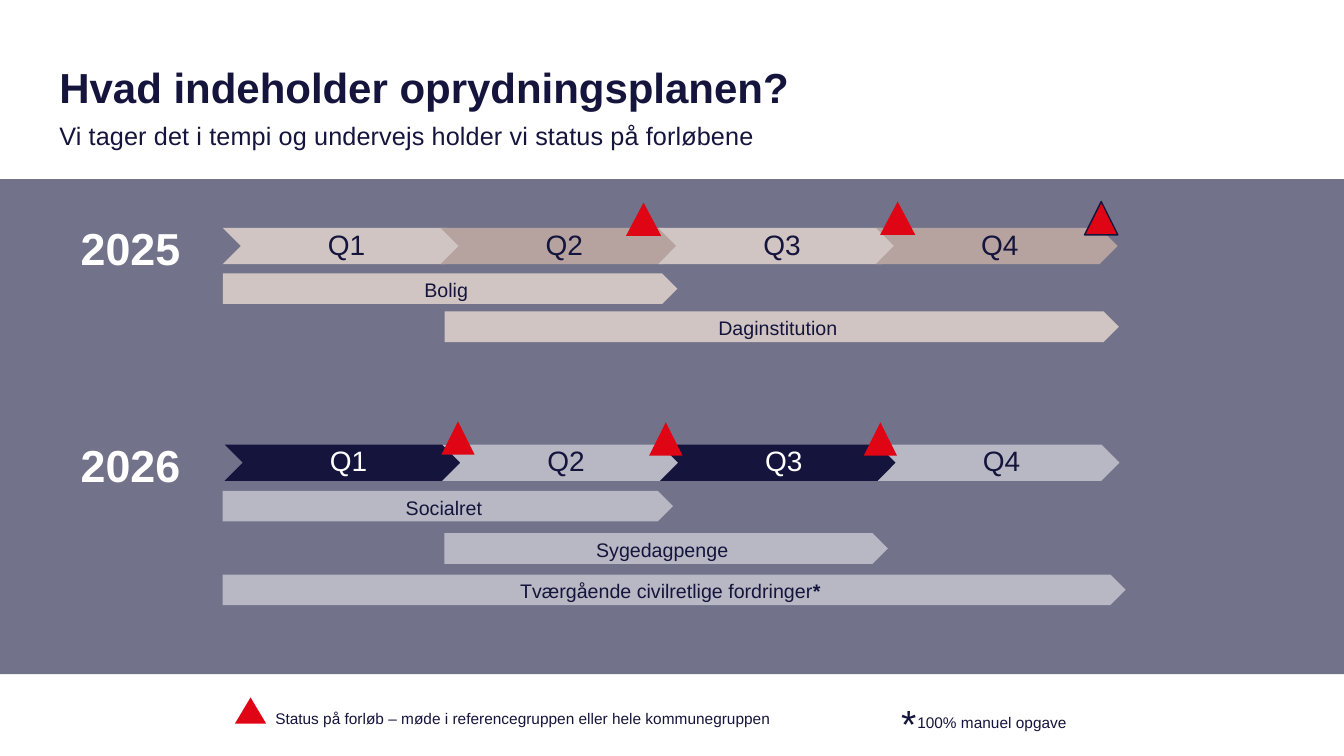
from lxml.etree import SubElement
from pptx import Presentation
from pptx.dml.color import RGBColor
from pptx.enum.shapes import MSO_SHAPE as Kind
from pptx.enum.text import MSO_ANCHOR as Anchor, PP_ALIGN as Align
from pptx.util import Pt

COLORS = {
    "white": "FFFFFF", "navy": "14143C", "slate": "72728A", "mist": "B8B8C4",
    "sand": "D1C5C3", "clay": "B6A3A0", "red": "DF0515",
}
QUARTER, STEP, DEPTH = 172.8, 155.5, 26
BAR = 21.8


def color(name):
    """Return the named colour."""
    return RGBColor.from_string(COLORS[name])


def write(frame, text, size=14, hue="navy", bold=False, mark="", align=Align.LEFT,
          lead=1.11, pad=(0, 0, 0, 0), anchor=Anchor.TOP, track=None):
    """Fill a text frame with one paragraph and an optional bold mark."""
    frame.word_wrap = True
    frame.vertical_anchor = anchor
    (frame.margin_left, frame.margin_top,
     frame.margin_right, frame.margin_bottom) = map(Pt, pad)
    para = frame.paragraphs[0]
    para.alignment = align
    if lead:
        para.line_spacing = lead
    for words, heavy in ((text, bold), (mark, True)):
        if words:
            run = para.add_run()
            run.text = words
            run.font.name = "Arial"
            run.font.size = Pt(size)
            run.font.bold = heavy
            run.font.color.rgb = color(hue)
            if track:
                run.font._element.set("spc", str(track))


def label(slide, box, text, **style):
    """Add a text box."""
    write(slide.shapes.add_textbox(*map(Pt, box)).text_frame, text, **style)


def draw(slide, kind, box, fill, edge=None):
    """Add a flat shape with an optional edge."""
    shape = slide.shapes.add_shape(kind, *map(Pt, box))
    shape.shadow.inherit = False
    shape.fill.solid()
    shape.fill.fore_color.rgb = color(fill)
    if edge:
        shape.line.color.rgb = color(edge)
        shape.line.width = Pt(1)
    else:
        shape.line.fill.background()
    return shape


def header(slide, left, top):
    """Place the title and the line below it."""
    pad = (7.2, 3.6, 7.2, 3.6)
    label(slide, (left, top, 875, 48), "Hvad indeholder oprydningsplanen?",
          size=30, bold=True, lead=None, pad=pad)
    label(slide, (left, top + 39.6, 721, 34.5),
          "Vi tager det i tempi og undervejs holder vi status på forløbene",
          size=18, pad=pad, track=10)


def year(slide, left, top, name, hues, inks, bars, marks):
    """Place a year with its quarters, bars and status marks."""
    label(slide, (57.6, top - 9, 85.7, 39.6), name, size=32, hue="white", bold=True)
    for i in range(4):
        box = (left + i * STEP, top, QUARTER, DEPTH)
        arrow = draw(slide, Kind.CHEVRON, box, hues[i % 2])
        write(arrow.text_frame, f"Q{i + 1}", size=20, hue=inks[i % 2], lead=0.9,
              align=Align.CENTER, anchor=Anchor.MIDDLE, pad=(6.5, 2.2, 2.2, 2.2))
    for text, x, y, width, fill, star in bars:
        bar = draw(slide, Kind.PENTAGON, (left + x, top + y, width, BAR), fill)
        write(bar.text_frame, text, mark=star, align=Align.CENTER,
              anchor=Anchor.MIDDLE, pad=(7.2, 3.6, 7.2, 3.6))
    for x, y, width, edge in marks:
        draw(slide, Kind.ISOSCELES_TRIANGLE,
             (left + x, top + y, width, 23.8), "red", edge)


def legend(slide, left, top):
    """Explain the status mark and the star."""
    draw(slide, Kind.ISOSCELES_TRIANGLE, (left, top, 22.3, 18.7), "red")
    label(slide, (left + 28.8, top + 7.2, 437.8, 13.7),
          "Status på forløb – møde i referencegruppen eller hele kommunegruppen",
          size=11)
    label(slide, (left + 475.9, top - 2.2, 18, 34.6), "*", size=28)
    label(slide, (left + 487.4, top + 9.4, 131, 13.7), "100% manuel opgave", size=11)


def main():
    """Build and save the slide."""
    deck = Presentation()
    deck.slide_width, deck.slide_height = Pt(960), Pt(540)
    slide = deck.slides.add_slide(deck.slide_layouts[6])
    draw(slide, Kind.RECTANGLE, (0, 128, 960, 353.5), "slate")
    header(slide, 35.3, 40.3)
    year(slide, 159.1, 162.7, "2025", ("sand", "clay"), ("navy", "navy"),
         [("Bolig", 0, 32.6, 324.7, "sand", ""),
          ("Daginstitution", 158.4, 59.8, 481.7, "sand", "")],
         [(288, -18, 25.2, None), (469.5, -18.7, 25.2, None),
          (615.6, -18.7, 23.8, "navy")])
    year(slide, 160.4, 317.5, "2026", ("navy", "mist"), ("white", "navy"),
         [("Socialret", -1.4, 33.1, 321.8, "mist", ""),
          ("Sygedagpenge", 157, 63.4, 316.8, "mist", ""),
          ("Tværgående civilretlige fordringer", -1.4, 92.9, 645.1, "mist", "*")],
         [(154.9, -16.5, 23.8, None), (303.3, -15.8, 23.8, None),
          (456.6, -15.8, 23.8, None)])
    legend(slide, 167.8, 498.2)
    deck.save("out.pptx")


if __name__ == "__main__":
    main()
